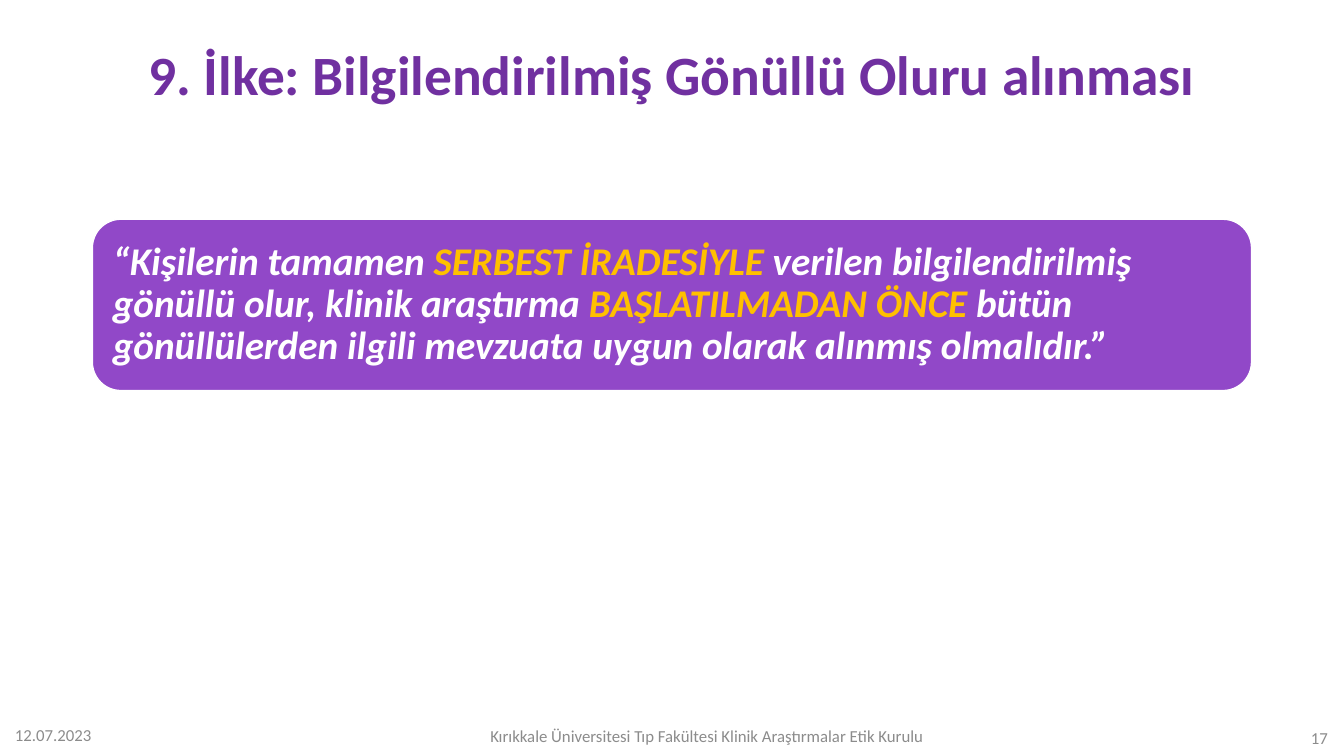
from dataclasses import dataclass

from pptx import Presentation
from pptx import util as u
from pptx.dml.color import RGBColor
from pptx.enum import shapes, text


@dataclass(frozen=True)
class Theme:
    font: str = "Calibri"
    title: RGBColor = RGBColor(0x70, 0x30, 0xA0)
    panel: RGBColor = RGBColor(0x91, 0x48, 0xC8)
    light: RGBColor = RGBColor(0xFF, 0xFF, 0xFF)
    accent: RGBColor = RGBColor(0xFF, 0xC0, 0x00)
    muted: RGBColor = RGBColor(0x8C, 0x8C, 0x8C)
    title_size: float = 39.6
    quote_size: float = 28
    footer_size: float = 12


THEME = Theme()
ALIGN = text.PP_ALIGN
QUOTE = [
    ("“Kişilerin tamamen ", THEME.light),
    ("SERBEST İRADESİYLE ", THEME.accent),
    ("verilen bilgilendirilmiş gönüllü olur, klinik araştırma ", THEME.light),
    ("BAŞLATILMADAN ÖNCE ", THEME.accent),
    ("bütün gönüllülerden ilgili mevzuata uygun olarak alınmış olmalıdır.”", THEME.light),
]


def points(*lengths):
    return [u.Pt(length) for length in lengths]


def style_paragraph(paragraph, size, align, color=None, bold=False):
    paragraph.alignment = align
    font = paragraph.font
    font.name, font.size, font.bold = THEME.font, u.Pt(size), bold
    if color is not None:
        font.color.rgb = color


def add_title(slide, box, wording):
    title = slide.shapes.title
    title.left, title.top, title.width, title.height = points(*box)
    frame = title.text_frame
    frame.auto_size = text.MSO_AUTO_SIZE.NONE
    frame.vertical_anchor = text.MSO_ANCHOR.MIDDLE
    frame.text = wording
    paragraph = frame.paragraphs[0]
    paragraph.line_spacing = 0.9
    style_paragraph(paragraph, THEME.title_size, ALIGN.CENTER, THEME.title, True)


def add_quote(slide, box, parts):
    panel = slide.shapes.add_shape(shapes.MSO_SHAPE.ROUNDED_RECTANGLE, *points(*box))
    panel.shadow.inherit = False
    panel.fill.solid()
    panel.fill.fore_color.rgb = THEME.panel
    panel.line.color.rgb = THEME.light
    panel.line.width = u.Pt(1)
    frame = panel.text_frame
    frame.word_wrap = True
    frame.vertical_anchor = text.MSO_ANCHOR.MIDDLE
    frame.margin_left = frame.margin_right = u.Pt(8.64)
    frame.margin_top = frame.margin_bottom = u.Pt(8.64)
    paragraph = frame.paragraphs[0]
    paragraph.line_spacing = 0.9
    style_paragraph(paragraph, THEME.quote_size, ALIGN.LEFT, bold=True)
    paragraph.font.italic = True
    for wording, color in parts:
        run = paragraph.add_run()
        run.text = wording
        run.font.color.rgb = color


def add_footer(slide, box, entries):
    left, top, width, height = box
    for wording, align, offset_x, offset_y, entry_width, entry_height in entries:
        label = slide.shapes.add_textbox(
            *points(left + offset_x, top + offset_y, entry_width, entry_height))
        frame = label.text_frame
        frame.word_wrap = True
        frame.vertical_anchor = text.MSO_ANCHOR.MIDDLE
        frame.text = wording
        style_paragraph(frame.paragraphs[0], THEME.footer_size, align, THEME.muted)


def build_principle_slide(presentation):
    slide = presentation.slides.add_slide(presentation.slide_layouts[5])
    add_title(slide, (66, 19.6, 828, 71.3), "9. İlke: Bilgilendirilmiş Gönüllü Oluru alınması")
    add_quote(slide, (66, 156.6, 828, 122.4), QUOTE)
    add_footer(slide, (3.6, 511.2, 952, 28.8), [
        ("12.07.2023", ALIGN.LEFT, 0, 0.7, 216, 25.9),
        ("Kırıkkale Üniversitesi Tıp Fakültesi Klinik Araştırmalar Etik Kurulu",
         ALIGN.CENTER, 314.6, 0, 373.7, 28.8),
        ("17", ALIGN.RIGHT, 736, 5, 216, 21.6),
    ])


def main():
    presentation = Presentation()
    presentation.slide_width, presentation.slide_height = points(960, 540)
    build_principle_slide(presentation)
    presentation.save("out.pptx")


if __name__ == "__main__":
    main()
